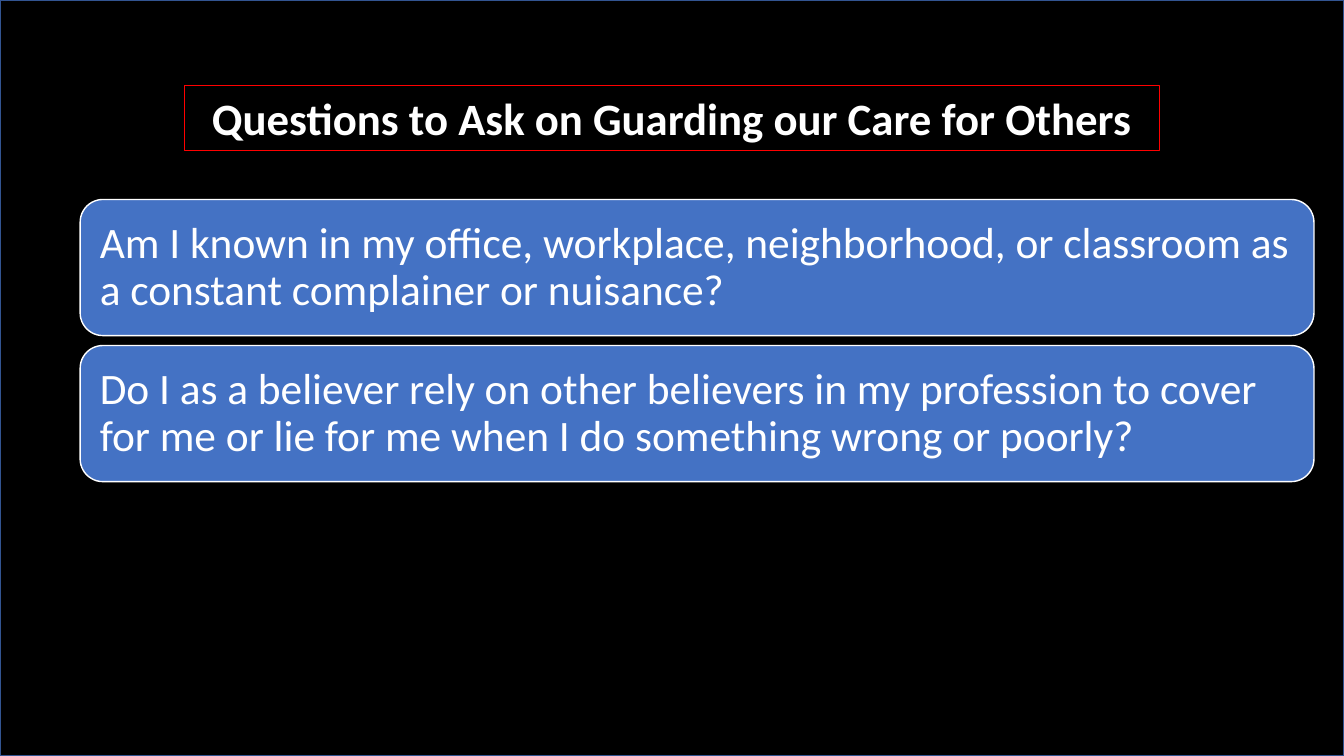
from dataclasses import dataclass

from pptx import Presentation
from pptx.dml.color import RGBColor
from pptx.enum.shapes import MSO_SHAPE as Preset
from pptx.enum.text import MSO_ANCHOR as Anchor, PP_ALIGN as Align
from pptx.shapes.autoshape import Shape
from pptx.shapes.shapetree import SlideShapes
from pptx.util import Pt

SLIDE_WIDTH, SLIDE_HEIGHT = 960, 540
COLORS = {
    "backdrop": "000000",
    "backdrop_edge": "325491",
    "title_edge": "FF0000",
    "card": "4472C4",
    "white": "FFFFFF",
}
TITLE = "Questions to Ask on Guarding our Care for Others"
QUESTIONS = [
    "Am I known in my office, workplace, neighborhood, or classroom as "
    "a constant complainer or nuisance?",
    "Do I as a believer rely on other believers in my profession to cover "
    "for me or lie for me when I do something wrong or poorly?",
]
CARD_LEFT, CARD_TOP = 57.3, 142.5
CARD_WIDTH, CARD_HEIGHT, CARD_PITCH = 881.3, 97.2, 104.3


@dataclass(frozen=True)
class Panel:
    left: float
    top: float
    width: float
    height: float
    edge: str
    edge_width: float = 1
    fill: str | None = None
    preset: Preset = Preset.RECTANGLE


def color(name: str) -> RGBColor:
    return RGBColor.from_string(COLORS[name])


def draw_panel(shapes: SlideShapes, panel: Panel) -> Shape:
    shape = shapes.add_shape(
        panel.preset, Pt(panel.left), Pt(panel.top), Pt(panel.width), Pt(panel.height)
    )
    shape.shadow.inherit = False
    if panel.fill:
        shape.fill.solid()
        shape.fill.fore_color.rgb = color(panel.fill)
    else:
        shape.fill.background()
    shape.line.color.rgb = color(panel.edge)
    shape.line.width = Pt(panel.edge_width)
    return shape


def write(
    shape: Shape,
    text: str,
    *,
    size: float,
    bold: bool = False,
    align: Align = Align.LEFT,
    anchor: Anchor = Anchor.MIDDLE,
    inset_x: float = 7.2,
    inset_y: float = 3.6,
    line_spacing: float = 1.0,
) -> None:
    frame = shape.text_frame
    frame.word_wrap = True
    frame.vertical_anchor = anchor
    frame.margin_left = frame.margin_right = Pt(inset_x)
    frame.margin_top = frame.margin_bottom = Pt(inset_y)
    paragraph = frame.paragraphs[0]
    paragraph.alignment = align
    paragraph.line_spacing = line_spacing
    run = paragraph.add_run()
    run.text = text
    run.font.name = "Calibri"
    run.font.size = Pt(size)
    run.font.bold = bold
    run.font.color.rgb = color("white")


def main() -> None:
    deck = Presentation()
    deck.slide_width, deck.slide_height = Pt(SLIDE_WIDTH), Pt(SLIDE_HEIGHT)
    shapes = deck.slides.add_slide(deck.slide_layouts[6]).shapes

    draw_panel(
        shapes,
        Panel(0, 0, SLIDE_WIDTH, SLIDE_HEIGHT, edge="backdrop_edge", fill="backdrop"),
    )
    heading = draw_panel(
        shapes, Panel(131.8, 61.4, 696.4, 46.1, edge="title_edge", edge_width=0.75)
    )
    write(heading, TITLE, size=32, bold=True, align=Align.CENTER, anchor=Anchor.TOP)

    for row, question in enumerate(QUESTIONS):
        card = draw_panel(
            shapes,
            Panel(
                CARD_LEFT,
                CARD_TOP + row * CARD_PITCH,
                CARD_WIDTH,
                CARD_HEIGHT,
                edge="white",
                fill="card",
                preset=Preset.ROUNDED_RECTANGLE,
            ),
        )
        write(card, question, size=31, inset_x=9.3, inset_y=9.3, line_spacing=0.9)

    deck.save("out.pptx")


if __name__ == "__main__":
    main()
